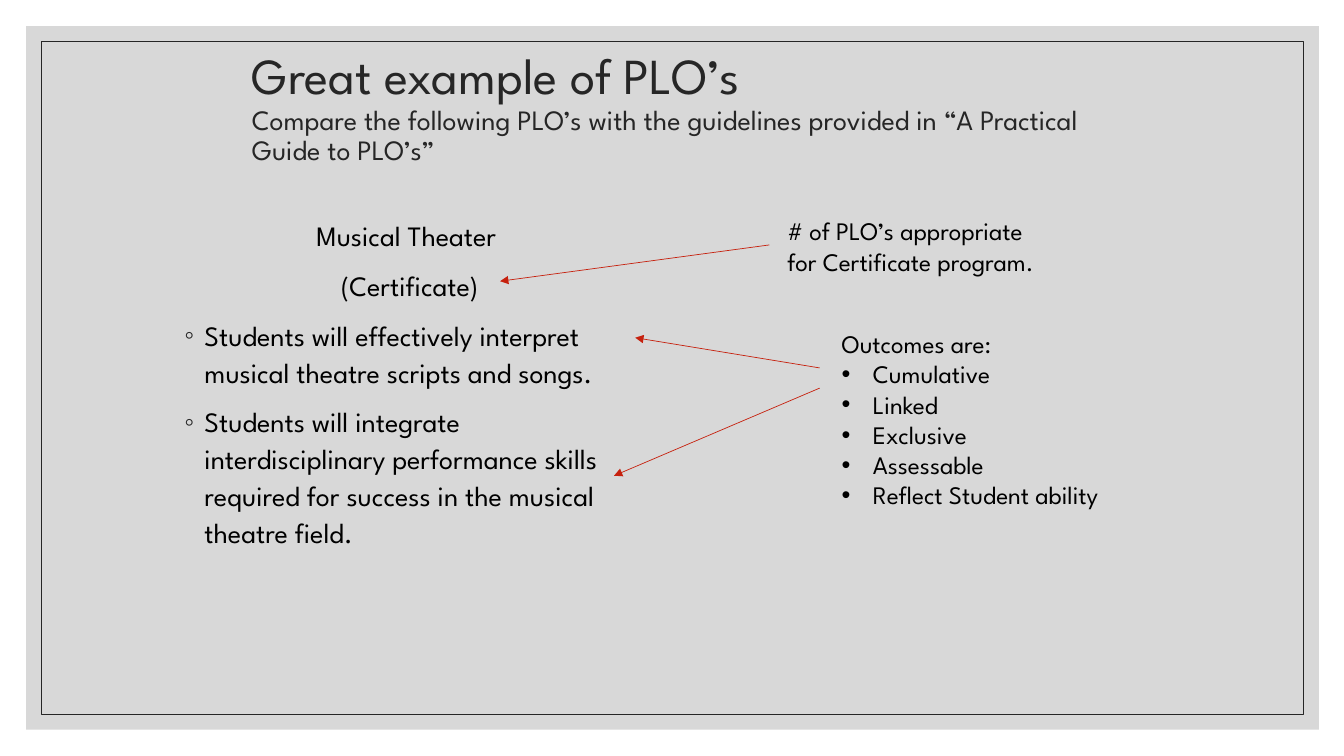
from lxml import etree
from pptx import Presentation
from pptx.dml.color import RGBColor
from pptx.enum.shapes import MSO_CONNECTOR, MSO_SHAPE
from pptx.enum.text import MSO_ANCHOR, MSO_AUTO_SIZE, PP_ALIGN
from pptx.oxml.ns import qn
from pptx.util import Inches, Pt

COLORS = {"panel": "BFBFBF", "dark": "262626", "text": "000000", "arrow": "C6210E"}
RGB = {name: RGBColor.from_string(value) for name, value in COLORS.items()}
FONT = "League Spartan"


def add_text(left, top, width, height):
    frame = slide.shapes.add_textbox(
        Inches(left), Inches(top), Inches(width), Inches(height)
    ).text_frame
    frame.word_wrap = True
    return frame


def fill_paragraph(paragraph, text, size, bullet=None, indent=0, bullet_color="text"):
    paragraph.text = text
    if bullet:
        props = paragraph._p.get_or_add_pPr()
        props.set("marL", str(Inches(indent)))
        props.set("indent", str(-Inches(indent)))
        color = etree.SubElement(props, qn("a:buClr"))
        etree.SubElement(color, qn("a:srgbClr"), val=COLORS[bullet_color])
        etree.SubElement(props, qn("a:buFont"), typeface="Arial")
        etree.SubElement(props, qn("a:buChar"), char=bullet)
    paragraph.font.name = FONT
    paragraph.font.size = Pt(size)
    paragraph.font.color.rgb = RGB["text"]


prs = Presentation()
prs.slide_width, prs.slide_height = Inches(13.33), Inches(7.5)
slide = prs.slides.add_slide(prs.slide_layouts[6])

panel = slide.shapes.add_shape(
    MSO_SHAPE.RECTANGLE, Inches(0.26), Inches(0.26), Inches(12.82), Inches(6.98)
)
panel.shadow.inherit = False
panel.fill.solid()
panel.fill.fore_color.rgb = RGB["panel"]
panel_color = panel.fill._xPr.find(qn("a:solidFill"))[0]
etree.SubElement(panel_color, qn("a:alpha"), val="60000")
panel.line.fill.background()

border = slide.shapes.add_shape(
    MSO_SHAPE.RECTANGLE, Inches(0.41), Inches(0.41), Inches(12.52), Inches(6.68)
)
border.shadow.inherit = False
border.fill.background()
border.line.color.rgb = RGB["dark"]
border.line.width = Pt(0.5)

title = add_text(2.4, 0.43, 8.45, 1.3)
title.vertical_anchor = MSO_ANCHOR.MIDDLE
heading = title.paragraphs[0]
heading.line_spacing = 0.9
heading.font.name = FONT
heading.font.color.rgb = RGB["dark"]
headline = heading.add_run()
headline.text = "Great example of PLO’s"
headline.font.size = Pt(36)
heading.add_line_break()
subtitle = heading.add_run()
subtitle.text = (
    "Compare the following PLO’s with the guidelines provided in "
    "“A Practical Guide to PLO’s”"
)
subtitle.font.size = Pt(20)

program = add_text(1.73, 2.09, 4.67, 4.71)
program_lines = [
    ("Musical Theater ", None),
    ("(Certificate)", None),
    ("Students will effectively interpret musical theatre scripts and songs.", "◦"),
    ("Students will integrate interdisciplinary performance skills required "
     "for success in the musical theatre field.", "◦"),
]
for i, (text, bullet) in enumerate(program_lines):
    line = program.add_paragraph() if i else program.paragraphs[0]
    line.alignment = PP_ALIGN.LEFT if bullet else PP_ALIGN.CENTER
    line.line_spacing = 1.1
    line.space_before = Pt(9)
    fill_paragraph(line, text, 20, bullet, 0.2, "dark")

count_note = add_text(7.71, 2.09, 2.72, 0.71)
count_note.auto_size = MSO_AUTO_SIZE.SHAPE_TO_FIT_TEXT
fill_paragraph(
    count_note.paragraphs[0], "# of PLO’s appropriate for Certificate program.", 18
)

outcomes = add_text(8.25, 3.21, 3.16, 1.92)
outcomes.auto_size = MSO_AUTO_SIZE.SHAPE_TO_FIT_TEXT
fill_paragraph(outcomes.paragraphs[0], "Outcomes are:", 18)
for trait in ["Cumulative", "Linked", "Exclusive", "Assessable", "Reflect Student ability"]:
    fill_paragraph(outcomes.add_paragraph(), trait, 18, "•", 0.31)

for x1, y1, x2, y2 in [
    (7.63, 2.43, 4.96, 2.79),
    (8.13, 3.65, 6.3, 3.35),
    (8.13, 3.85, 6.09, 4.72),
]:
    arrow = slide.shapes.add_connector(
        MSO_CONNECTOR.STRAIGHT, Inches(x1), Inches(y1), Inches(x2), Inches(y2)
    )
    arrow.line.color.rgb = RGB["arrow"]
    arrow.line.width = Pt(0.5)
    etree.SubElement(arrow.line._get_or_add_ln(), qn("a:tailEnd"), type="triangle")
    etree.SubElement(arrow._element.spPr, qn("a:effectLst"))

prs.save("out.pptx")
